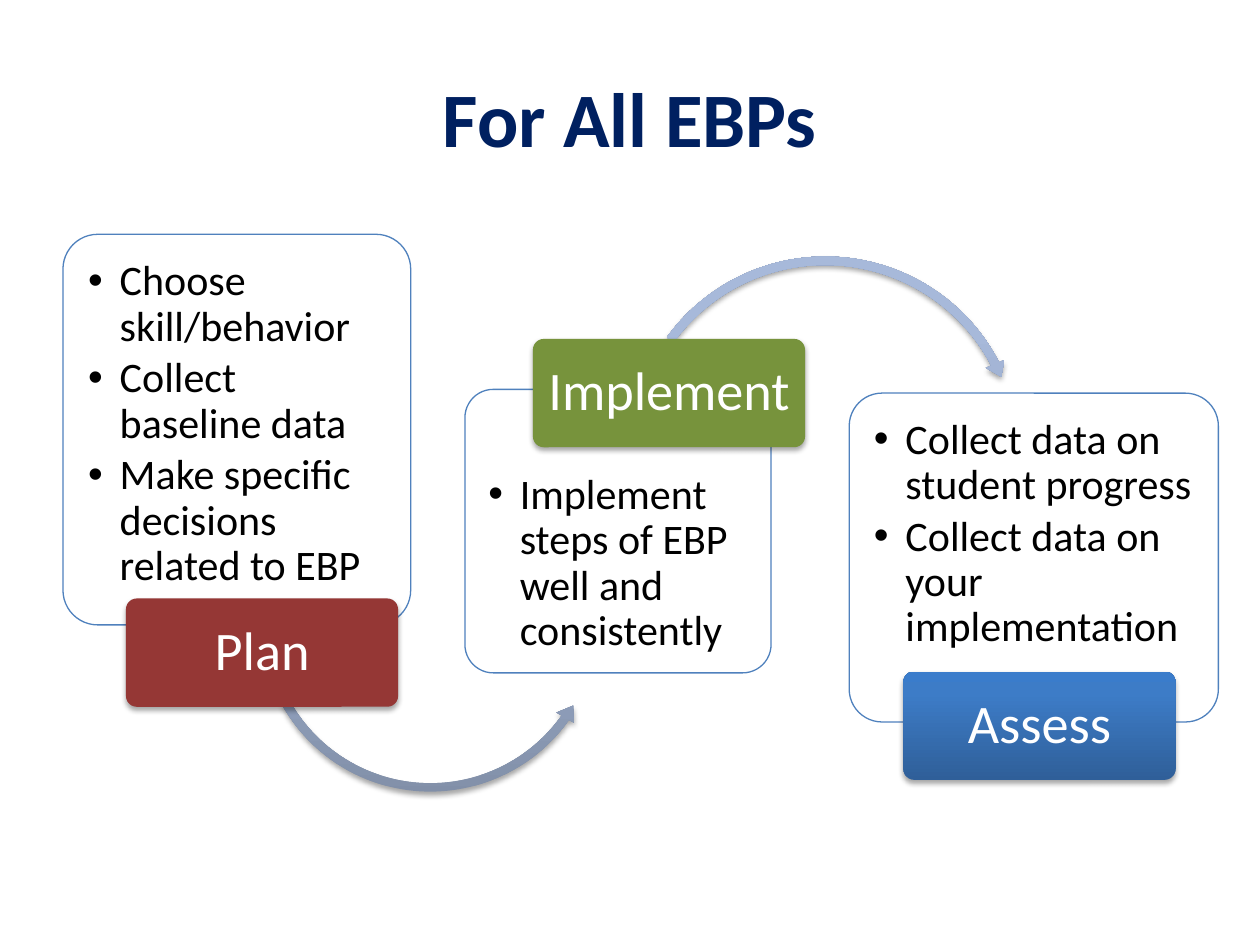
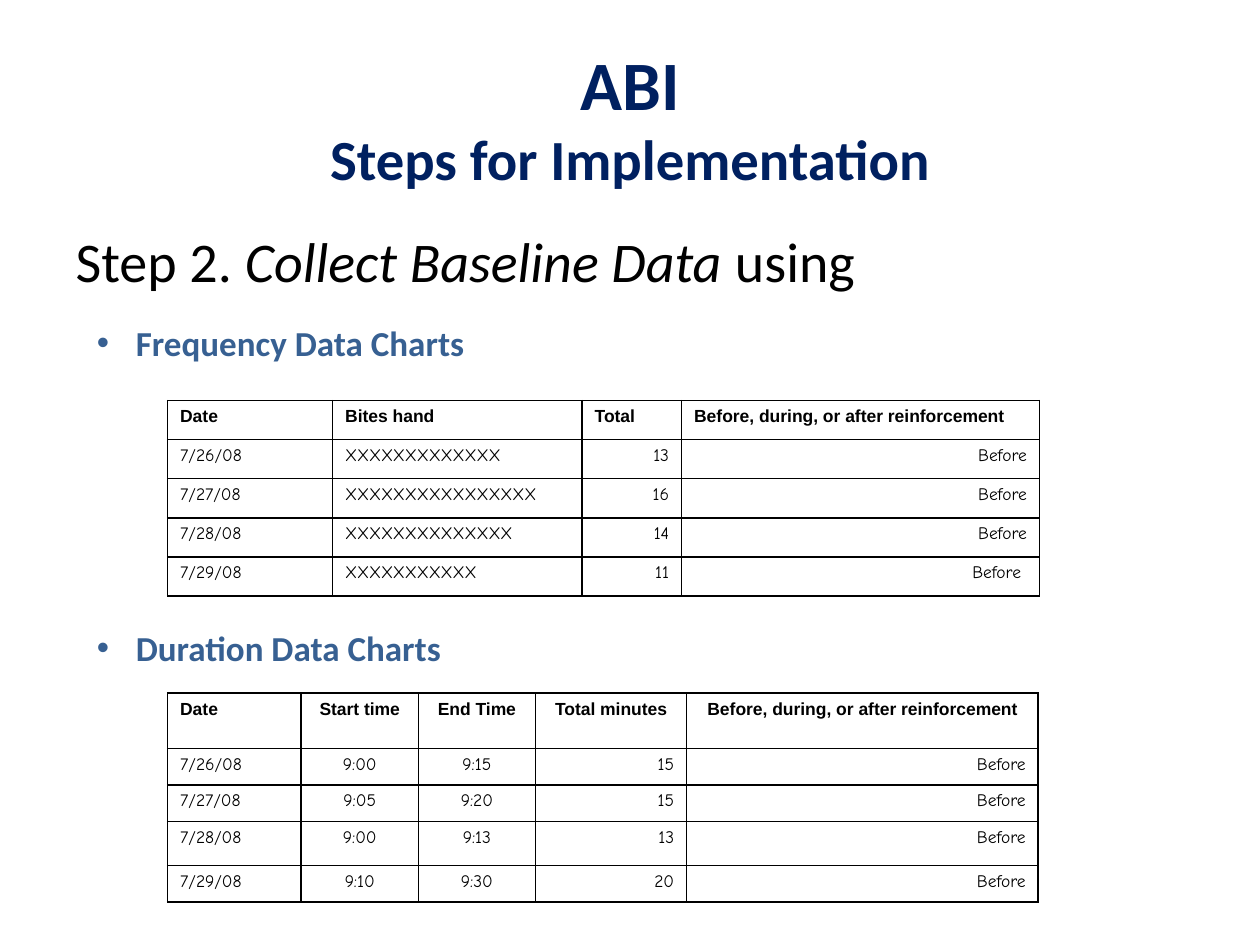
from lxml import etree
from pptx import Presentation
from pptx import util as u
from pptx.dml.color import RGBColor
from pptx.enum import shapes, text
from pptx.oxml.ns import qn

COLORS = {
    "navy": "002060", "blue": "376092", "outline": "4F81BD", "red": "953735",
    "green": "77933C", "black": "000000", "white": "FFFFFF",
}
BLUES = [(0, "2F5F99"), (80, "3D7CC7"), (100, "3A7CCB")]
GREYS = [(0, "818FA8"), (80, "A7B9DA"), (100, "A7BADC")]
SHAPE = shapes.MSO_SHAPE
ALIGN = {"l": text.PP_ALIGN.LEFT, "c": text.PP_ALIGN.CENTER, "r": text.PP_ALIGN.RIGHT}


def write(p, words, size, color="black", font="Calibri", bold=False, italic=False,
          align=None, hang=None, bullet=None):
    """Add a run to paragraph p; hang is a hanging indent in inches."""
    r = p.add_run()
    r.text = words
    r.font.size, r.font.name = u.Pt(size), font
    r.font.bold, r.font.italic = bold, italic
    r.font.color.rgb = RGBColor.from_string(COLORS[color])
    if align:
        p.alignment = ALIGN[align]
    pPr = p._p.get_or_add_pPr()
    if hang is not None:
        pPr.set("marL", str(u.Inches(hang)))
        pPr.set("indent", str(-u.Inches(hang)))
    if bullet:
        etree.SubElement(pPr, qn("a:buFont"), typeface="Arial")
        etree.SubElement(pPr, qn("a:buChar"), char=bullet)


def add_shape(s, kind, at, adj, fill, line=None, opacity=100, shadow=True):
    """Add a preset shape; fill is a colour name or a list of gradient stops."""
    sp = s.shapes.add_shape(kind, *map(u.Inches, at))
    for i, value in enumerate(adj):
        sp.adjustments[i] = value
    spPr = sp._element.spPr
    if isinstance(fill, list):
        sp.fill.gradient()
        sp.fill.gradient_angle = 90
        stops = spPr.find(".//" + qn("a:gsLst"))
        stops.clear()
        for pos, color in fill:
            gs = etree.SubElement(stops, qn("a:gs"), pos=str(pos * 1000))
            etree.SubElement(gs, qn("a:srgbClr"), val=color)
    else:
        sp.fill.solid()
        sp.fill.fore_color.rgb = RGBColor.from_string(COLORS[fill])
        if opacity < 100:
            clr = spPr.find(".//" + qn("a:srgbClr"))
            etree.SubElement(clr, qn("a:alpha"), val=str(opacity * 1000))
    if line:
        sp.line.color.rgb = RGBColor.from_string(COLORS[line])
        sp.line.width = u.Pt(0.75)
    else:
        sp.line.fill.background()
    sp.shadow.inherit = False
    if shadow:
        outer = etree.SubElement(spPr.find(qn("a:effectLst")), qn("a:outerShdw"),
                                 blurRad=str(u.Pt(3.1)), dist=str(u.Pt(1.8)),
                                 dir="5400000", rotWithShape="0")
        clr = etree.SubElement(outer, qn("a:srgbClr"), val=COLORS["black"])
        etree.SubElement(clr, qn("a:alpha"), val="35000")
    return sp


prs = Presentation()
prs.slide_width, prs.slide_height = u.Inches(10), u.Inches(7.5)

# Titles
slides = []
for layout, lines in [(5, [("For All EBPs", 44)]),
                      (1, [("ABI", 39.6), ("Steps for Implementation", 32.4)])]:
    s = prs.slides.add_slide(prs.slide_layouts[layout])
    title = s.shapes.title
    title.left, title.top, title.width, title.height = map(u.Inches, (0.5, 0.3, 9, 1.25))
    tf = title.text_frame
    tf.auto_size = text.MSO_AUTO_SIZE.NONE
    tf.vertical_anchor = text.MSO_ANCHOR.MIDDLE
    for i, (words, size) in enumerate(lines):
        if i:
            tf.paragraphs[0].add_line_break()
        write(tf.paragraphs[0], words, size, "navy", bold=True, align="c")
    slides.append(s)

# Slide 1: three steps joined by curved arrows
steps = [
    dict(label="Plan", fill="red", label_at=(1, 4.75), card=(0.5, 1.86, 2.76, 3.1),
         top=0.12, right=0.14,
         points=["Choose skill/behavior", "Collect baseline data",
                 "Make specific decisions related to EBP"],
         arrow=(SHAPE.LEFT_CIRCULAR_ARROW, (2.02, 3.54, 2.79, 2.79),
                (0.024, 2.964, 21.229, 90.755, 0.029))),
    dict(label="Implement", fill="green", label_at=(4.23, 2.69),
         card=(3.69, 3.09, 2.43, 2.25), top=0.6, right=0.14,
         points=["Implement steps of EBP well and consistently"],
         arrow=(SHAPE.CIRCULAR_ARROW, (4.95, 1.99, 3.2, 3.2),
                (0.021, 2.574, 199.511, 129.595, 0.025))),
    dict(label="Assess", fill=BLUES, label_at=(7.17, 5.33),
         card=(6.74, 3.12, 2.93, 2.61), top=0.12, right=0.1,
         points=["Collect data on student progress", "Collect data on your implementation"],
         arrow=None),
]
s = slides[0]
for step in steps:
    card = add_shape(s, SHAPE.ROUNDED_RECTANGLE, step["card"], [0.1], "white",
                     line="outline", opacity=90, shadow=False)
    tf = card.text_frame
    tf.word_wrap = True
    tf.vertical_anchor = text.MSO_ANCHOR.TOP
    tf.margin_left = tf.margin_bottom = u.Inches(0.12)
    tf.margin_top, tf.margin_right = u.Inches(step["top"]), u.Inches(step["right"])
    for i, point in enumerate(step["points"]):
        p = tf.add_paragraph() if i else tf.paragraphs[0]
        p.level, p.line_spacing, p.space_after = 1, 0.9, u.Pt(3.6)
        write(p, point, 24, align="l", hang=0.25, bullet="•")
    if step["arrow"]:
        add_shape(s, *step["arrow"], GREYS)
    label = add_shape(s, SHAPE.ROUNDED_RECTANGLE, (*step["label_at"], 2.16, 0.86), [0.1],
                      step["fill"])
    tf = label.text_frame
    tf.word_wrap = True
    tf.vertical_anchor = text.MSO_ANCHOR.MIDDLE
    tf.margin_left = tf.margin_right = u.Inches(0.06)
    tf.margin_top = tf.margin_bottom = u.Inches(0.04)
    tf.paragraphs[0].line_spacing = 0.9
    write(tf.paragraphs[0], step["label"], 31, "white", align="c")

# Slide 2: step heading, then a captioned table for each kind of data
s = slides[1]
body = s.placeholders[1]
body.left, body.top, body.width, body.height = map(u.Inches, (0.5, 1.75, 9, 0.75))
tf = body.text_frame
tf.auto_size = text.MSO_AUTO_SIZE.NONE
p = tf.paragraphs[0]
for words, italic in [("Step 2. ", False), ("Collect Baseline Data ", True), ("using", False)]:
    write(p, words, 32, italic=italic, hang=0)
etree.SubElement(p._p.get_or_add_pPr(), qn("a:buNone"))

dates = ["7/26/08", "7/27/08", "7/28/08", "7/29/08"]
reinforcement = "Before, during, or after reinforcement"
bites = [13, 16, 14, 11]
times = [("9:00", "9:15", "15"), ("9:05", "9:20", "15"),
         ("9:00", "9:13", "13"), ("9:10", "9:30", "20")]
charts = [
    dict(caption="Frequency Data Charts", caption_at=(0.67, 2.5, 3.15, 0.44), top=3.18,
         cols=[1.31, 1.98, 0.79, 2.84], heights=[0.31] * 5, head="llll", align="llrr",
         rows=[("Date", "Bites hand", "Total", reinforcement)]
         + [(d, "X" * n, str(n), "Before " if d == dates[-1] else "Before")
            for d, n in zip(dates, bites)]),
    dict(caption="Duration Data Charts", caption_at=(0.67, 4.92, 2.96, 0.44), top=5.5,
         cols=[1.06, 0.93, 0.93, 1.2, 2.79], heights=[0.44, 0.29, 0.29, 0.35, 0.29],
         head="lcccc", align="lccrr",
         rows=[("Date", "Start time", "End Time", "Total minutes", reinforcement)]
         + [(d, *t, "Before") for d, t in zip(dates, times)]),
]
for chart in charts:
    box = s.shapes.add_textbox(*map(u.Inches, chart["caption_at"]))
    tf = box.text_frame
    tf.word_wrap = False
    tf.auto_size = text.MSO_AUTO_SIZE.SHAPE_TO_FIT_TEXT
    write(tf.paragraphs[0], chart["caption"], 20, "blue", bold=True, hang=0.31, bullet="•")

    rows, cols, heights = chart["rows"], chart["cols"], chart["heights"]
    frame = s.shapes.add_table(len(rows), len(cols), u.Inches(1.33), u.Inches(chart["top"]),
                               u.Inches(sum(cols)), u.Inches(sum(heights)))
    table = frame.table
    table.first_row = table.horz_banding = False
    for col, width in zip(table.columns, cols):
        col.width = u.Inches(width)
    for i, (row, height) in enumerate(zip(table.rows, heights)):
        row.height = u.Inches(height)
        for cell, words, align in zip(row.cells, rows[i], chart["align" if i else "head"]):
            write(cell.text_frame.paragraphs[0], words, 10, font="Comic Neue" if i else "Arial",
                  bold=i == 0, align=align, hang=0.38)
            tcPr = cell._tc.get_or_add_tcPr()
            for side in ("a:lnL", "a:lnR", "a:lnT", "a:lnB"):
                ln = etree.SubElement(tcPr, qn(side), w=str(u.Pt(1)))
                fill = etree.SubElement(ln, qn("a:solidFill"))
                etree.SubElement(fill, qn("a:srgbClr"), val=COLORS["black"])
            cell.fill.background()

prs.save("out.pptx")
